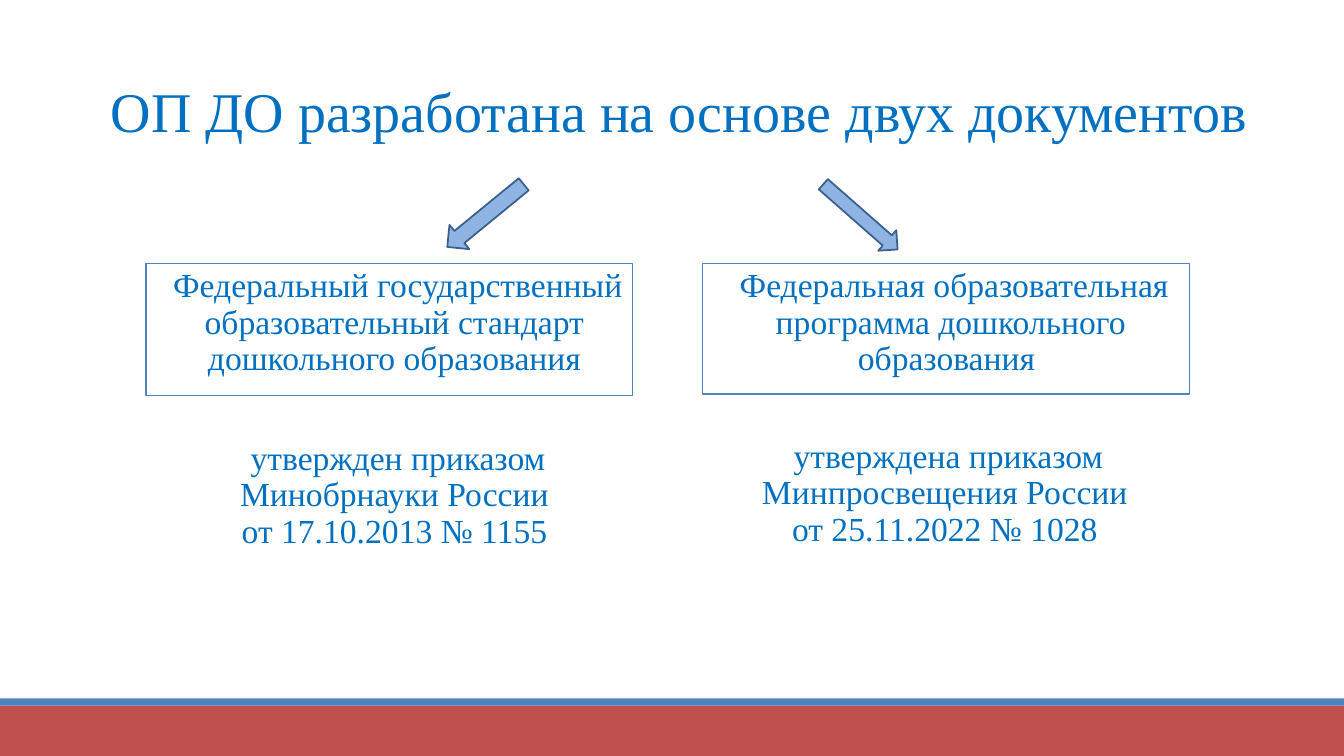
"""Build a slide on the two documents behind the preschool education programme."""
from lxml import etree
from pptx import Presentation
from pptx.dml.color import RGBColor
from pptx.enum.shapes import MSO_SHAPE
from pptx.enum.text import MSO_ANCHOR, MSO_AUTO_SIZE, PP_ALIGN
from pptx.oxml.ns import qn
from pptx.util import Cm, Pt

RECTANGLE, DOWN_ARROW = MSO_SHAPE.RECTANGLE, MSO_SHAPE.DOWN_ARROW
TOP, FIT_SHAPE = MSO_ANCHOR.TOP, MSO_AUTO_SIZE.SHAPE_TO_FIT_TEXT
LEFT, CENTER = PP_ALIGN.LEFT, PP_ALIGN.CENTER

TEXT_BLUE = RGBColor(0x00, 0x70, 0xC0)
BLUE = RGBColor(0x4F, 0x81, 0xBD)
RED = RGBColor(0xC0, 0x50, 0x4D)
ARROW_FILL = RGBColor(0x8E, 0xB4, 0xE3)
ARROW_LINE = RGBColor(0x3A, 0x5F, 0x8C)
FONT = "Times New Roman"

SLIDE_WIDTH, SLIDE_HEIGHT = 33.87, 19.05
TITLE = "ОП ДО разработана на основе двух документов"
TITLE_BOX = (2.54, 1.8, 29.54, 1.96)
BANDS = [(17.78, 1.27, RED), (17.6, 0.18, BLUE)]
DOCUMENTS = [
    {
        "name": "Федеральный государственный образовательный стандарт дошкольного образования",
        "name_box": (3.68, 6.65, 12.27, 3.33),
        "order": "утвержден приказом Минобрнауки России\vот 17.10.2013 № 1155",
        "order_box": (3.68, 11, 12.27, 3.66),
        "arrow_box": (11.84, 4.19, 0.79, 2.49),
        "arrow_angle": 50.7,
    },
    {
        "name": "Федеральная образовательная программа дошкольного образования ",
        "name_box": (17.7, 6.65, 12.27, 3.28),
        "order": "утверждена приказом Минпросвещения России\vот 25.11.2022 № 1028",
        "order_box": (17.68, 10.95, 12.01, 3.66),
        "arrow_box": (21.34, 4.22, 0.69, 2.49),
        "arrow_angle": 311.3,
    },
]


def lengths(box):
    return [Cm(value) for value in box]


def set_font(paragraph, size):
    paragraph.font.name = FONT
    paragraph.font.size = Pt(size)
    paragraph.font.color.rgb = TEXT_BLUE


def add_filled_shape(slide, kind, box, fill):
    shape = slide.shapes.add_shape(kind, *lengths(box))
    shape.shadow.inherit = False
    shape.fill.solid()
    shape.fill.fore_color.rgb = fill
    shape.line.fill.background()
    return shape


def add_blank_bullet(paragraph):
    properties = paragraph._p.get_or_add_pPr()
    properties.set("marL", str(Cm(0.25)))
    properties.set("indent", str(-Cm(0.25)))
    etree.SubElement(properties, qn("a:buChar")).set("char", " ")


def add_document_text(slide, text, box):
    shape = slide.shapes.add_textbox(*lengths(box))
    frame = shape.text_frame
    frame.word_wrap = True
    frame.vertical_anchor = TOP
    frame.margin_left = frame.margin_right = 0
    frame.text = text
    paragraph = frame.paragraphs[0]
    paragraph.alignment = CENTER
    paragraph.line_spacing = 0.9
    paragraph.space_before = Pt(12)
    paragraph.space_after = Pt(2)
    add_blank_bullet(paragraph)
    set_font(paragraph, 24)
    return shape


def add_title(slide):
    title = slide.shapes.title
    title.left, title.top, title.width, title.height = lengths(TITLE_BOX)
    frame = title.text_frame
    frame.text = TITLE
    frame.word_wrap = True
    frame.auto_size = FIT_SHAPE
    frame.vertical_anchor = TOP
    frame.paragraphs[0].alignment = LEFT
    set_font(frame.paragraphs[0], 40)


def add_document(slide, document):
    name = add_document_text(slide, document["name"], document["name_box"])
    name.line.color.rgb = BLUE
    name.line.width = Pt(0.75)
    add_document_text(slide, document["order"], document["order_box"])
    arrow = add_filled_shape(slide, DOWN_ARROW, document["arrow_box"], ARROW_FILL)
    arrow.rotation = document["arrow_angle"]
    arrow.line.color.rgb = ARROW_LINE
    arrow.line.width = Pt(1.25)


def main():
    presentation = Presentation()
    presentation.slide_width = Cm(SLIDE_WIDTH)
    presentation.slide_height = Cm(SLIDE_HEIGHT)
    slide = presentation.slides.add_slide(presentation.slide_layouts[5])
    for top, height, color in BANDS:
        add_filled_shape(slide, RECTANGLE, (0, top, SLIDE_WIDTH, height), color)
    add_title(slide)
    for document in DOCUMENTS:
        add_document(slide, document)
    presentation.save("out.pptx")


if __name__ == "__main__":
    main()
